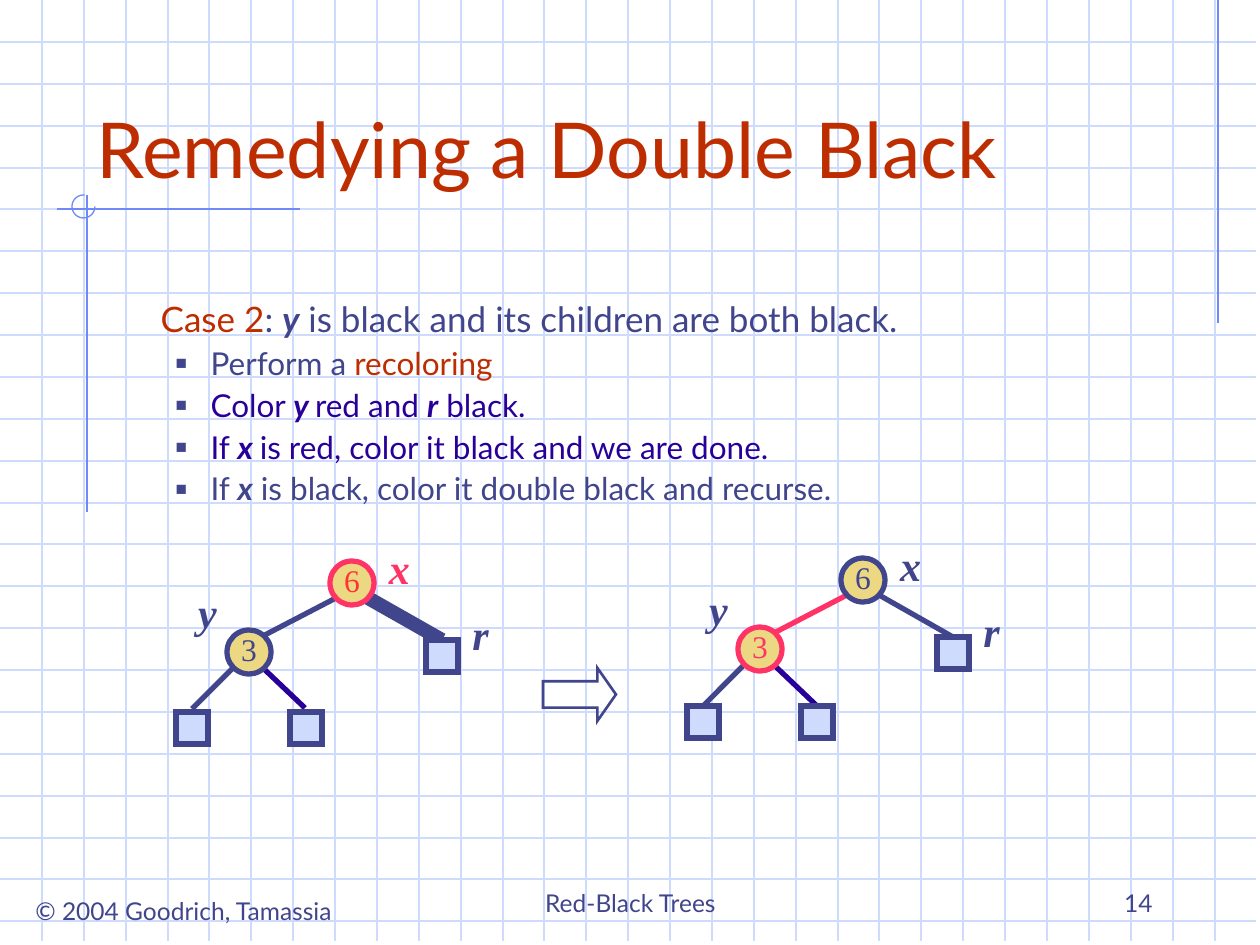
from dataclasses import dataclass

from lxml import etree
from pptx import Presentation, util as u
from pptx.dml.color import RGBColor
from pptx.enum import shapes, text
from pptx.oxml import ns

SCALE = 914400 / 126
Kind = shapes.MSO_SHAPE
Align = text.PP_ALIGN
Anchor = text.MSO_ANCHOR


@dataclass(frozen=True)
class Theme:
    sans: str = "Lato"
    serif: str = "Times New Roman"
    ink: str = "40458C"
    rust: str = "BE2D00"
    deep: str = "280099"
    rose: str = "FF3366"
    red: str = "FF3333"
    gold: str = "ECD882"
    pale: str = "CFDBFD"
    blue: str = "6F89F7"
    title: int = 44
    label: int = 24
    lead: int = 20
    item: int = 18
    foot: int = 14
    thin: float = 0.75
    bold: float = 3


T = Theme()


@dataclass(frozen=True)
class Run:
    text: str
    color: str = T.ink
    strong: bool = False


@dataclass(frozen=True)
class Tree:
    dx: int
    dy: int
    drop: int
    root: str
    digit: str
    name: str
    child: str
    left: str
    right: float


def px(n: float) -> int:
    return round(n * SCALE)


def rgb(code: str) -> RGBColor:
    return RGBColor.from_string(code)


def place(shape, x: int, y: int, w: int, h: int) -> None:
    shape.left, shape.top, shape.width, shape.height = map(px, (x, y, w, h))


def style(par, size: int, color: str, face: str = T.sans, strong: bool = False) -> None:
    font = par.font
    font.name, font.size = face, u.Pt(size)
    font.bold = font.italic = strong
    font.color.rgb = rgb(color)


def line(x1: int, y1: int, x2: int, y2: int, color: str, width: float) -> None:
    rule = slide.shapes.add_connector(shapes.MSO_CONNECTOR.STRAIGHT, *map(px, (x1, y1, x2, y2)))
    rule.line.color.rgb, rule.line.width = rgb(color), u.Pt(width)
    etree.SubElement(rule.element.spPr, ns.qn("a:effectLst"))


def shape(kind, x: int, y: int, w: int, h: int, color: str, width: float, fill: str = ""):
    form = slide.shapes.add_shape(kind, *map(px, (x, y, w, h)))
    form.shadow.inherit = False
    if fill:
        form.fill.solid()
        form.fill.fore_color.rgb = rgb(fill)
    else:
        form.fill.background()
    form.line.color.rgb, form.line.width = rgb(color), u.Pt(width)
    etree.SubElement(form.line._get_or_add_ln(), ns.qn("a:miter"), lim="800000")
    return form


def node(x: int, y: int, digit: str, ring: str, color: str) -> None:
    form = shape(Kind.OVAL, x, y, 44, 44, ring, T.bold, T.gold)
    frame = form.text_frame
    frame.word_wrap, frame.vertical_anchor = False, Anchor.MIDDLE
    frame.margin_left = frame.margin_right = frame.margin_top = 0
    frame.margin_bottom = px(6)
    par = frame.paragraphs[0]
    par.text, par.alignment = digit, Align.CENTER
    style(par, T.item, color, T.serif)


def note(words: str, x: int, y: int, w: int, h: int, size: int, align, anchor=Anchor.TOP,
         color: str = T.ink, face: str = T.sans, strong: bool = False) -> None:
    frame = slide.shapes.add_textbox(*map(px, (x, y, w, h))).text_frame
    frame.word_wrap, frame.vertical_anchor = True, anchor
    par = frame.paragraphs[0]
    par.text, par.alignment = words, align
    style(par, size, color, face, strong)


def bullet(par, first: bool) -> None:
    prop = par._p.get_or_add_pPr()
    prop.set("marL", str(px(48 if first else 98)))
    prop.set("indent", str(px(0 if first else -35)))
    if first:
        etree.SubElement(prop, ns.qn("a:buNone"))
        return
    tint = etree.SubElement(prop, ns.qn("a:buClr"))
    etree.SubElement(tint, ns.qn("a:srgbClr"), val=T.ink)
    etree.SubElement(prop, ns.qn("a:buSzPct"), val="60000")
    etree.SubElement(prop, ns.qn("a:buChar"), char="■")


def fill_list(frame, rows: list[list[Run]]) -> None:
    for i, row in enumerate(rows):
        par = frame.add_paragraph() if i else frame.paragraphs[0]
        par.level = min(i, 1)
        par.alignment, par.line_spacing = Align.LEFT, 0.9
        par.space_before = u.Pt(4.5 if i else 0)
        bullet(par, i == 0)
        style(par, T.item if i else T.lead, T.ink)
        for part in row:
            run = par.add_run()
            run.text = part.text
            run.font.color.rgb = rgb(part.color)
            if part.strong:
                run.font.bold = run.font.italic = True


def backdrop() -> None:
    step = 41.88
    for n in range(1, 23):
        line(0, round(n * step), 1256, round(n * step), T.pale, T.thin)
    for n in range(1, 30):
        line(round(n * step), 0, round(n * step), 941, T.pale, T.thin)
    for ends in ((1218, 0, 1218, 323), (300, 209, 57, 209), (87, 195, 87, 512)):
        line(*ends, T.blue, T.thin)
    arc = shape(Kind.ARC, 72, 195, 23, 23, T.blue, T.thin)
    arc.adjustments[0], arc.adjustments[1] = 0, 165.6


def draw(t: Tree) -> None:
    edges = (
        (442, 640, 368, 598, T.ink, t.right),
        (263, 636, 336, 598, t.left, T.bold),
        (192, 709, 233, 668, T.ink, T.bold),
        (305, 708, 263, 668, T.deep, T.bold),
    )
    for x1, y1, x2, y2, color, width in edges:
        line(x1 + t.dx, y1 + t.dy, x2 + t.dx, y2 + t.dy, color, width)
    node(330 + t.dx, 561 + t.dy, "6", t.root, t.digit)
    node(227 + t.dx, 630 + t.dy, "3", t.child, t.child)
    for x, y in ((426, 640 + t.dy), (176, 712 + t.drop), (290, 712 + t.drop)):
        shape(Kind.RECTANGLE, x + t.dx, y, 32, 32, T.ink, T.bold, T.pale)
    for name, x, y, color in (("y", 176, 580, T.ink), ("x", 368, 536, t.name), ("r", 449, 602, T.ink)):
        note(name, x + t.dx, y + t.dy, 63, 63, T.label, Align.CENTER,
             color=color, face=T.serif, strong=True)


deck = Presentation()
deck.slide_width, deck.slide_height = px(1260), px(945)
slide = deck.slides.add_slide(deck.slide_layouts[1])
title, body = slide.placeholders
backdrop()
for holder in (title, body):
    holder.element.getparent().append(holder.element)
    holder.text_frame.auto_size = text.MSO_AUTO_SIZE.NONE

place(title, 84, 42, 1071, 158)
title.text_frame.vertical_anchor = Anchor.BOTTOM
head = title.text_frame.paragraphs[0]
head.text, head.alignment = "Remedying a Double Black", Align.LEFT
style(head, T.title, T.rust)

place(body, 100, 296, 1071, 230)
fill_list(body.text_frame, [
    [Run("Case 2", T.rust), Run(": "), Run("y", strong=True),
     Run(" is black and its children are both black.")],
    [Run("Perform a "), Run("recoloring", T.rust)],
    [Run("Color ", T.deep), Run("y ", T.deep, True), Run("red and ", T.deep),
     Run("r", T.deep, True), Run(" black.", T.deep)],
    [Run("If ", T.deep), Run("x ", T.deep, True),
     Run("is red, color it black and we are done.", T.deep)],
    [Run("If "), Run("x", strong=True), Run(" is black, color it double black and recurse.")],
])

draw(Tree(0, 0, 0, T.rose, T.red, T.rose, T.ink, T.ink, 8))
draw(Tree(511, -3, -6, T.ink, T.ink, T.ink, T.rose, T.rose, T.bold))
arrow = shape(Kind.RIGHT_ARROW, 543, 668, 73, 53, T.ink, 1.5)
arrow.adjustments[0], arrow.adjustments[1] = 0.5, 0.35

note("© 2004 Goodrich, Tamassia", 23, 890, 326, 43, T.foot, Align.LEFT)
note("Red-Black Trees", 431, 861, 399, 63, T.foot, Align.CENTER, Anchor.BOTTOM)
note("14", 903, 861, 262, 63, T.foot, Align.RIGHT, Anchor.BOTTOM)
deck.save("out.pptx")
